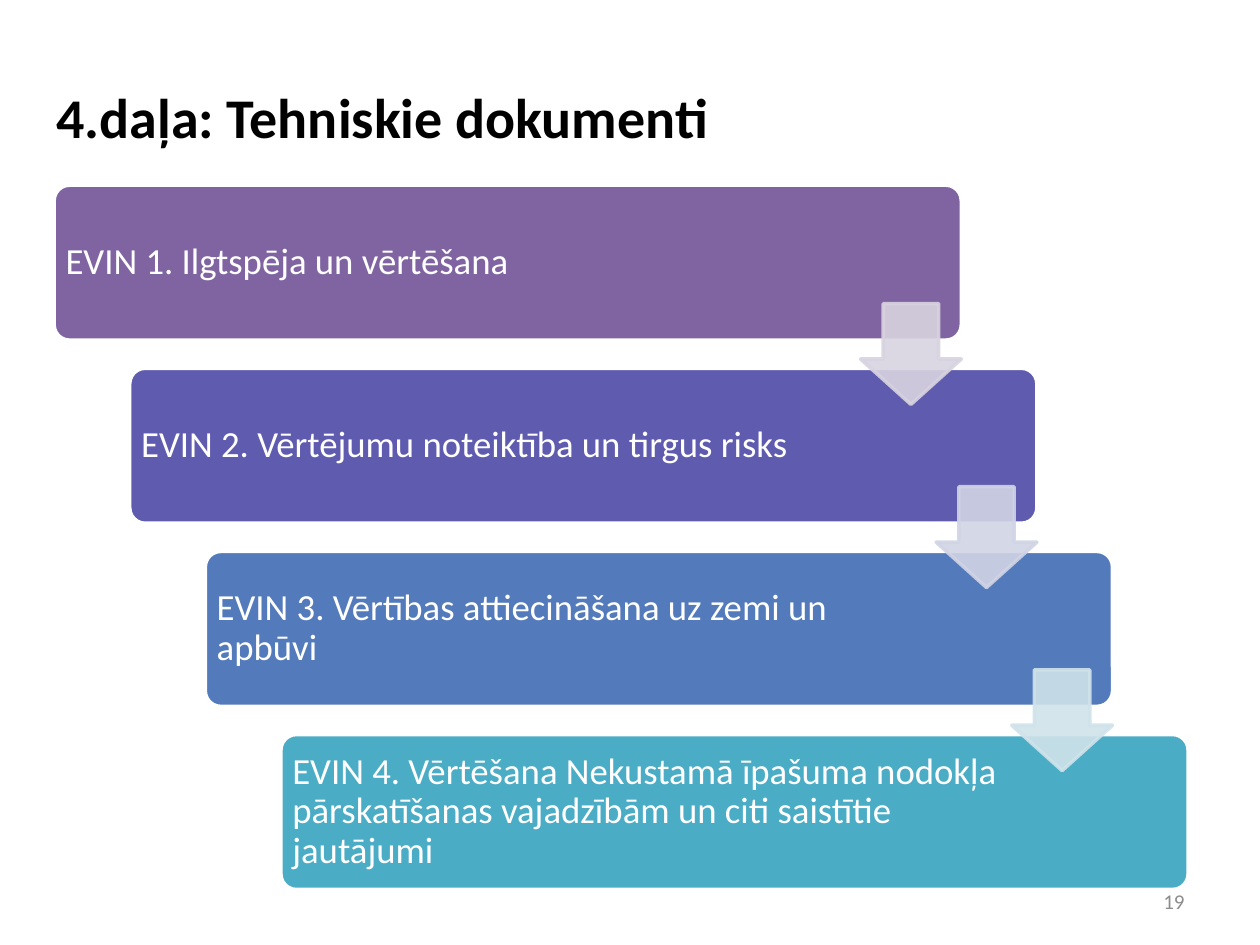
from lxml import etree
from pptx import Presentation
from pptx.dml.color import RGBColor
from pptx.enum import shapes, text
from pptx.oxml.ns import qn
from pptx.util import Inches, Pt

WHITE = RGBColor(0xFF, 0xFF, 0xFF)
BLACK = RGBColor(0, 0, 0)
GRAY = RGBColor(0x8C, 0x8C, 0x8C)
STEPS = [
    ("EVIN 1. Ilgtspēja un vērtēšana", RGBColor(0x80, 0x64, 0xA2)),
    ("EVIN 2. Vērtējumu noteiktība un tirgus risks", RGBColor(0x5F, 0x5B, 0xAE)),
    ("EVIN 3. Vērtības attiecināšana uz zemi un apbūvi", RGBColor(0x53, 0x7A, 0xBA)),
    ("EVIN 4. Vērtēšana Nekustamā īpašuma nodokļa pārskatīšanas vajadzībām "
     "un citi saistītie jautājumi", RGBColor(0x4B, 0xAC, 0xC6)),
]
ARROWS = [RGBColor(0xD8, 0xD3, 0xE0), RGBColor(0xD1, 0xD4, 0xE5),
          RGBColor(0xD0, 0xE3, 0xEA)]


def write(slide, words, box, size=21, color=WHITE, bold=False,
          align=text.PP_ALIGN.LEFT, inset=0.1, spacing=None):
    """Place a wrapped, vertically centred text box."""
    frame = slide.shapes.add_textbox(*map(Inches, box)).text_frame
    frame.word_wrap = True
    frame.vertical_anchor = text.MSO_ANCHOR.MIDDLE
    frame.margin_left = frame.margin_right = Inches(inset)
    frame.margin_top = frame.margin_bottom = Inches(min(inset, 0.05))
    para = frame.paragraphs[0]
    para.alignment = align
    para.line_spacing = spacing
    run = para.add_run()
    run.text = words
    font = run.font
    font.name, font.size, font.bold = "Calibri", Pt(size), bold
    font.color.rgb = color


def draw(slide, kind, box, color, edge, adjust, alpha=None):
    """Draw a filled preset shape, with opacity in percent."""
    shape = slide.shapes.add_shape(kind, *map(Inches, box))
    shape.shadow.inherit = False
    shape.fill.solid()
    shape.fill.fore_color.rgb = color
    shape.line.color.rgb = edge
    shape.line.width = Pt(2)
    for i, value in enumerate(adjust):
        shape.adjustments[i] = value
    if alpha:
        for tint in shape._element.spPr.iter(qn("a:srgbClr")):
            etree.SubElement(tint, qn("a:alpha")).set("val", str(alpha * 1000))


def stairs(slide, box):
    """Lay out the descending steps and the arrows between them."""
    left, top, width, height = box
    wide, high, side = 7.2, 1.23, 0.8
    gaps = len(STEPS) - 1
    spots = [(left + i * (width - wide) / gaps, top + i * (height - high) / gaps)
             for i in range(len(STEPS))]
    for (x, y), (words, color) in zip(spots, STEPS):
        draw(slide, shapes.MSO_SHAPE.ROUNDED_RECTANGLE, (x, y, wide, high),
             color, WHITE, [0.1])
        write(slide, words, (x, y, 5.81, high), inset=0.09, spacing=0.9)
    for (x, y), color in zip(spots, ARROWS):
        draw(slide, shapes.MSO_SHAPE.DOWN_ARROW,
             (x + wide - side, y + 0.94, side, side),
             color, color, [0.55, 0.45], alpha=90)


def main():
    """Build and save the slide."""
    deck = Presentation()
    deck.slide_width, deck.slide_height = Inches(10), Inches(7.5)
    slide = deck.slides.add_slide(deck.slide_layouts[6])
    write(slide, "4.daļa: Tehniskie dokumenti", (0.35, 0.3, 9.15, 1.25),
          size=32, color=BLACK, bold=True)
    stairs(slide, (0.43, 1.47, 9, 5.59))
    write(slide, "19", (7.17, 6.95, 2.33, 0.4), size=12, color=GRAY,
          align=text.PP_ALIGN.RIGHT)
    deck.save("out.pptx")


if __name__ == "__main__":
    main()
